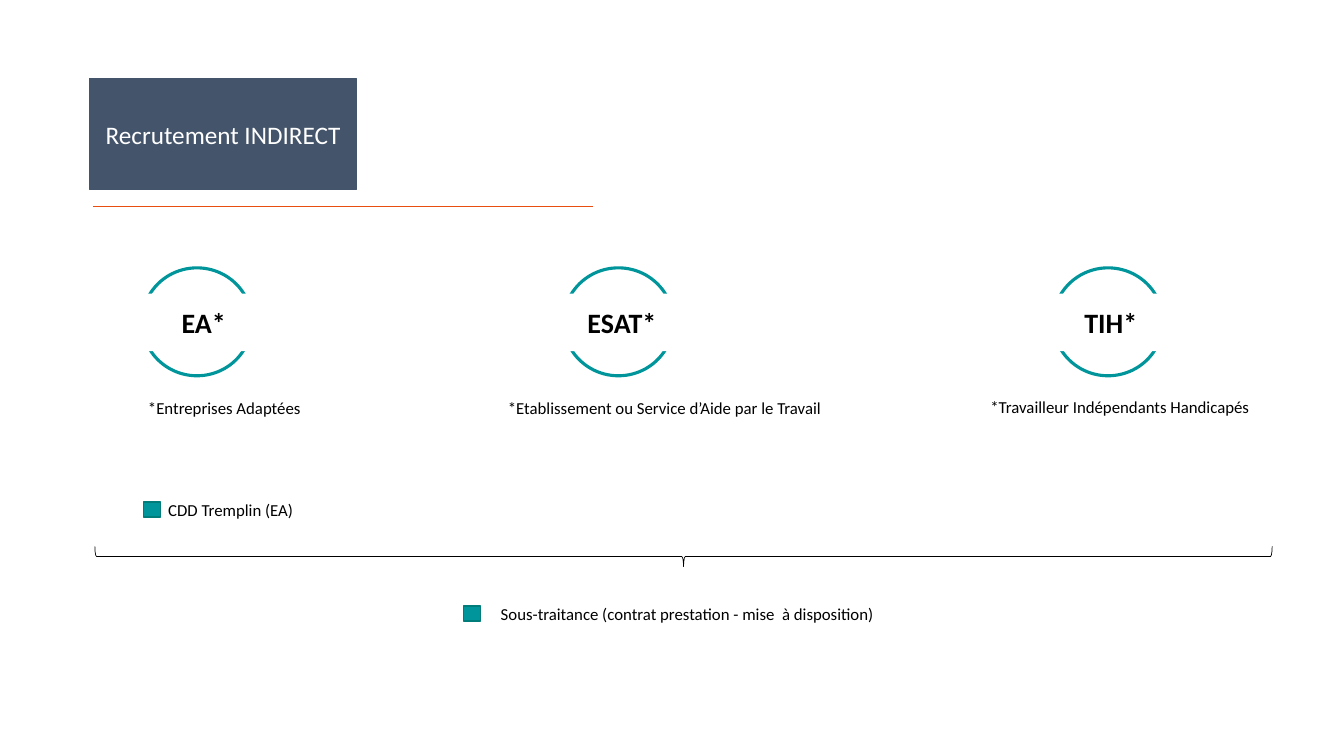
from lxml.etree import SubElement
from pptx import Presentation
from pptx.dml.color import RGBColor
from pptx.enum.shapes import MSO_CONNECTOR, MSO_SHAPE
from pptx.enum.text import MSO_ANCHOR, MSO_AUTO_SIZE, PP_ALIGN
from pptx.oxml import parse_xml
from pptx.oxml.ns import nsdecls, qn
from pptx.util import Cm, Pt

TEAL, DARK_TEAL, SLATE, ORANGE = "00959A", "007D7A", "44546A", "E84E0F"
BLACK, WHITE = "000000", "FFFFFF"


def rgb(value):
    return RGBColor.from_string(value)


class SlideBuilder:
    font = "Calibri"

    def __init__(self, slide):
        self.slide = slide

    def paint(self, sp, fill=None, line=None, width=1):
        if fill:
            sp.fill.solid()
            sp.fill.fore_color.rgb = rgb(fill)
        else:
            sp.fill.background()
        if line:
            sp.line.color.rgb = rgb(line)
            sp.line.width = Pt(width)
        else:
            sp.line.fill.background()

    def set_text(self, sp, text, size, color=BLACK, bold=False, align=PP_ALIGN.CENTER,
                 anchor=MSO_ANCHOR.MIDDLE):
        tf = sp.text_frame
        tf.word_wrap = True
        tf.vertical_anchor = anchor
        p = tf.paragraphs[0]
        p.text = text
        p.alignment = align
        p.font.name = self.font
        p.font.size = Pt(size)
        p.font.bold = bold
        p.font.color.rgb = rgb(color)

    def title(self, text, x, y, w, h):
        sp = self.slide.shapes.title
        sp.left, sp.top, sp.width, sp.height = Cm(x), Cm(y), Cm(w), Cm(h)
        rounded = parse_xml(f'<a:prstGeom {nsdecls("a")} prst="roundRect"><a:avLst/></a:prstGeom>')
        sp.element.spPr.find(qn("a:xfrm")).addnext(rounded)
        self.paint(sp, SLATE, SLATE)
        self.set_text(sp, text, 18, WHITE)
        sp.text_frame.auto_size = MSO_AUTO_SIZE.NONE

    def shape(self, kind, x, y, w, h, fill=None, line=None, width=1, parent=None):
        shapes = (parent or self.slide).shapes
        sp = shapes.add_shape(kind, Cm(x), Cm(y), Cm(w), Cm(h))
        sp.shadow.inherit = False
        self.paint(sp, fill, line, width)
        return sp

    def text(self, text, x, y, w, parent=None):
        shapes = (parent or self.slide).shapes
        sp = shapes.add_textbox(Cm(x), Cm(y), Cm(w), Cm(0.76))
        self.set_text(sp, text, 12, align=PP_ALIGN.LEFT, anchor=MSO_ANCHOR.TOP)
        sp.text_frame.auto_size = MSO_AUTO_SIZE.SHAPE_TO_FIT_TEXT

    def rule(self, x1, x2, y):
        line = self.slide.shapes.add_connector(
            MSO_CONNECTOR.STRAIGHT, Cm(x1), Cm(y), Cm(x2), Cm(y))
        line.line.color.rgb = rgb(ORANGE)
        line.line.width = Pt(1)
        SubElement(line.element.spPr, qn("a:effectLst"))

    def badge(self, text, circle_x, label_x):
        """Circle crossed by a white band that carries the acronym."""
        group = self.slide.shapes.add_group_shape()
        self.shape(MSO_SHAPE.OVAL, circle_x, 6.75, 2.77, 2.72, line=TEAL, width=2.25, parent=group)
        band = self.shape(MSO_SHAPE.ROUNDED_RECTANGLE, label_x, 7.4, 4.37, 1.45, WHITE, parent=group)
        self.set_text(band, text, 20, bold=True)

    def legend(self, text, square_x, text_x, y, w):
        group = self.slide.shapes.add_group_shape()
        self.text(text, text_x, y, w, group)
        self.shape(MSO_SHAPE.RECTANGLE, square_x, y + 0.18, 0.43, 0.38, TEAL, DARK_TEAL, parent=group)


def main():
    prs = Presentation()
    prs.slide_width, prs.slide_height = Cm(33.87), Cm(19.05)
    s = SlideBuilder(prs.slides.add_slide(prs.slide_layouts[5]))

    s.title("Recrutement INDIRECT", 2.26, 1.98, 6.73, 2.79)
    s.rule(2.34, 14.94, 5.21)

    for acronym, circle_x, label_x, meaning, x, y, w in [
        ("EA*", 3.58, 2.95, "*Entreprises Adaptées", 3.48, 9.91, 4.67),
        ("ESAT*", 14.2, 13.49, "*Etablissement ou Service d’Aide par le Travail", 12.55, 9.91, 8.89),
        ("TIH*", 26.54, 25.81, "*Travailleur Indépendants Handicapés", 24.71, 9.86, 7.32),
    ]:
        s.badge(acronym, circle_x, label_x)
        s.text(meaning, x, y, w)

    s.legend("CDD Tremplin (EA)", 3.61, 3.99, 12.47, 5)
    s.legend("Sous-traitance (contrat prestation - mise  à disposition)", 11.68, 12.37, 15.09, 10.11)

    brace = s.shape(MSO_SHAPE.RIGHT_BRACE, 16.97, -0.81, 0.51, 29.67, line=BLACK, width=0.5)
    brace.rotation = 90

    prs.save("out.pptx")


if __name__ == "__main__":
    main()
